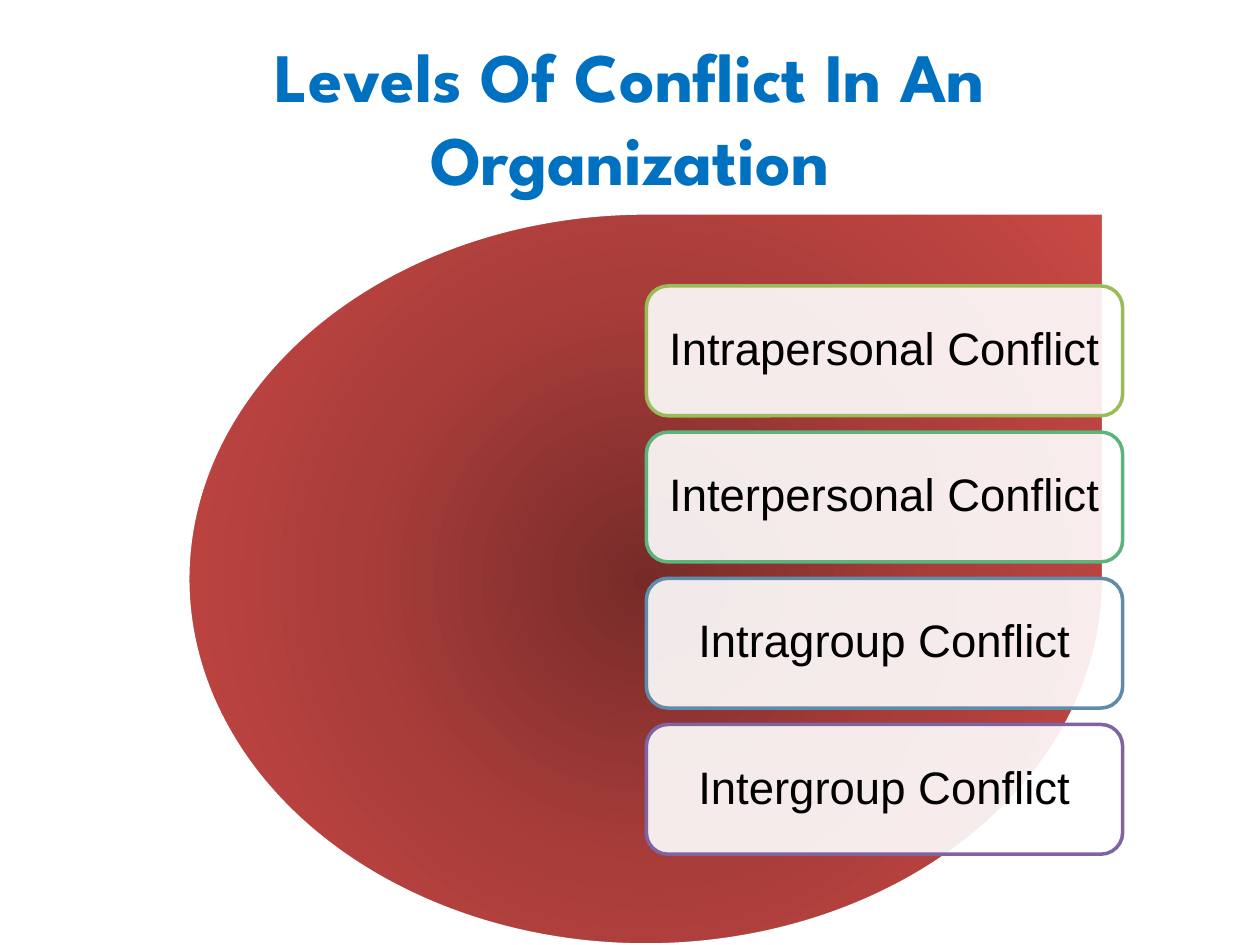
from dataclasses import dataclass

from lxml import etree
from pptx import Presentation
from pptx.dml.color import RGBColor
from pptx.enum.shapes import MSO_SHAPE
from pptx.enum.text import MSO_ANCHOR, PP_ALIGN
from pptx.oxml import parse_xml
from pptx.oxml.ns import nsdecls, qn
from pptx.util import Inches, Pt

ROUND = MSO_SHAPE.ROUNDED_RECTANGLE
TEAR = MSO_SHAPE.TEAR
MIDDLE = MSO_ANCHOR.MIDDLE
CENTER = PP_ALIGN.CENTER


@dataclass(frozen=True)
class Theme:
    head_font: str = "League Spartan"
    body_font: str = "Arial"
    head_size: float = 39.6
    body_size: float = 26
    blue: str = "0070C0"
    black: str = "000000"
    white: str = "FFFFFF"
    reds: tuple = ((0, "772B29"), (50, "A93D3A"), (100, "C94844"))
    edge: float = 2
    alpha: int = 90


class Deck:
    def __init__(self, slide, theme):
        self.slide = slide
        self.theme = theme

    def label(self, shape, text, font, size, color, bold=False):
        frame = shape.text_frame
        frame.word_wrap = True
        frame.vertical_anchor = MIDDLE
        para = frame.paragraphs[0]
        para.alignment = CENTER
        run = para.add_run()
        run.text = text
        run.font.name = font
        run.font.size = Pt(size)
        run.font.bold = bold
        run.font.color.rgb = RGBColor.from_string(color)
        return para

    def title(self, text, *box):
        shape = self.slide.shapes.add_textbox(*map(Inches, box))
        look = self.theme
        self.label(shape, text, look.head_font, look.head_size, look.blue, bold=True)

    def shape(self, kind, box, edge):
        shape = self.slide.shapes.add_shape(kind, *map(Inches, box))
        shape.shadow.inherit = False
        shape.line.color.rgb = RGBColor.from_string(edge)
        shape.line.width = Pt(self.theme.edge)
        return shape

    def drop(self, *box):
        """Draw a teardrop with a gradient that spreads from its centre."""
        shape = self.shape(TEAR, box, self.theme.white)
        stops = "".join(
            f'<a:gs pos="{pos * 1000}"><a:srgbClr val="{color}"/></a:gs>'
            for pos, color in self.theme.reds
        )
        fill = parse_xml(
            f'<a:gradFill {nsdecls("a")} rotWithShape="1"><a:gsLst>{stops}</a:gsLst>'
            '<a:path path="circle"><a:fillToRect l="50000" t="50000" r="50000" b="50000"/>'
            "</a:path></a:gradFill>"
        )
        shape.element.spPr.find(qn("a:prstGeom")).addnext(fill)

    def card(self, text, edge, *box):
        """Draw a see-through rounded box with a coloured edge."""
        look = self.theme
        shape = self.shape(ROUND, box, edge)
        shape.fill.solid()
        shape.fill.fore_color.rgb = RGBColor.from_string(look.white)
        color = shape.element.spPr.find(qn("a:solidFill")).find(qn("a:srgbClr"))
        etree.SubElement(color, qn("a:alpha"), val=str(look.alpha * 1000))
        para = self.label(shape, text, look.body_font, look.body_size, look.black)
        para.line_spacing = 0.9


def main():
    prs = Presentation()
    prs.slide_width, prs.slide_height = Inches(10), Inches(7.5)
    deck = Deck(prs.slides.add_slide(prs.slide_layouts[6]), Theme())

    deck.title("Levels Of Conflict In An Organization", 0.5, 0.3, 9, 1.25)
    deck.drop(1.49, 1.69, 7.27, 5.81)

    levels = (
        ("Intrapersonal", "9BBB59"),
        ("Interpersonal", "5CB37C"),
        ("Intragroup", "608CAB"),
        ("Intergroup", "8064A2"),
    )
    top, step = 2.27, 1.16
    for row, (level, edge) in enumerate(levels):
        deck.card(f"{level} Conflict", edge, 5.13, top + row * step, 3.78, 1.03)

    prs.save("out.pptx")


if __name__ == "__main__":
    main()
